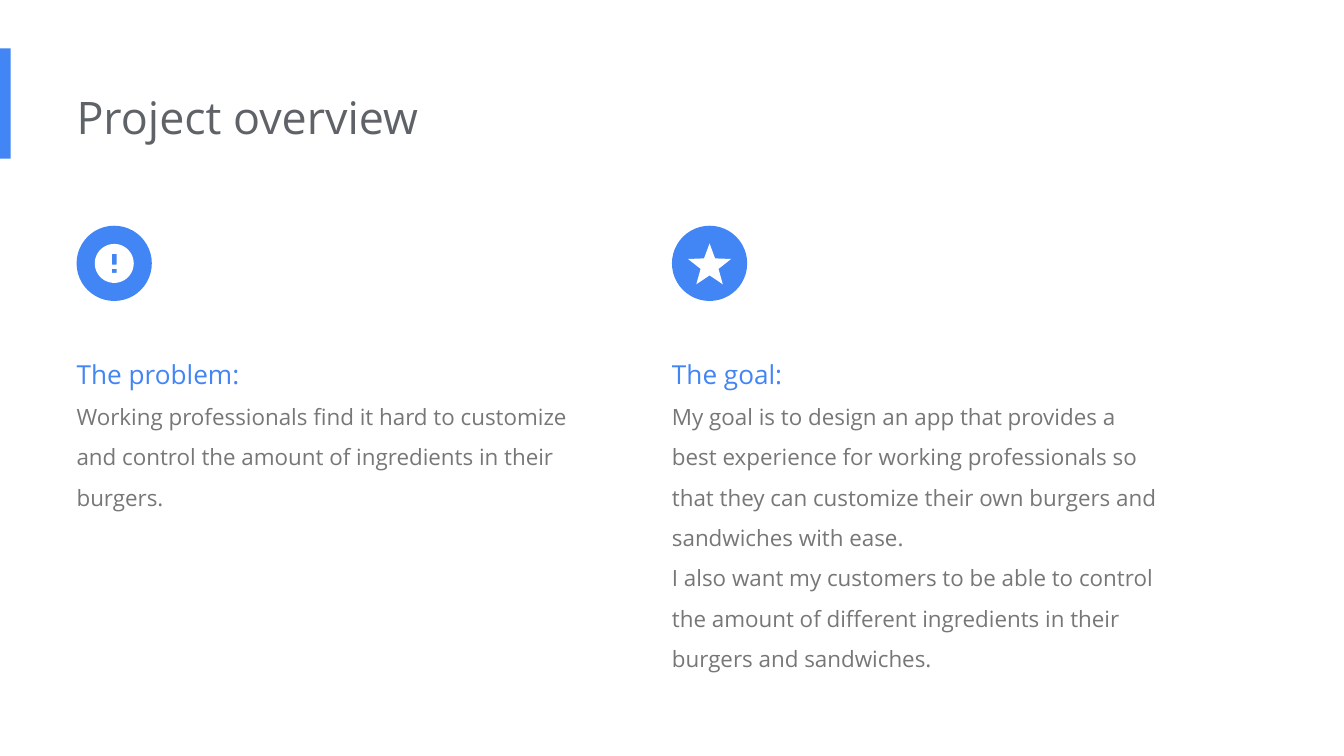
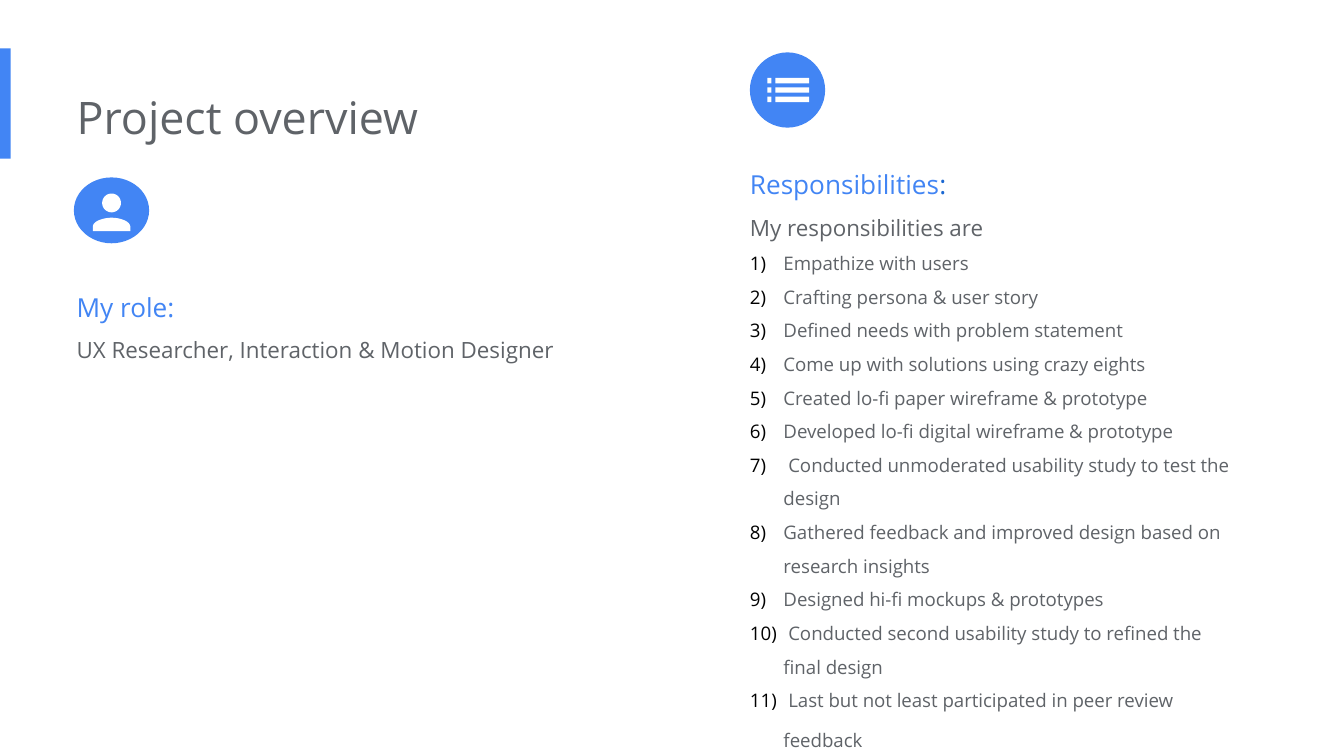
import math

import lxml.etree
import pptx
import pptx.dml.color
import pptx.enum.shapes
import pptx.enum.text
import pptx.oxml.ns
import pptx.util

COLOURS = {
    "blue": "4285F4",
    "deep blue": "1967D2",
    "slate": "5F6368",
    "grey": "777777",
    "white": "FFFFFF",
    "black": "000000",
}
FONT = "Open Sans"
HEADING, BODY, ITEM = 14, 12, 10

presentation = pptx.Presentation()
presentation.slide_width = pptx.util.Inches(10)
presentation.slide_height = pptx.util.Inches(10 * 9 / 16)

# Square grid: 100 columns across the slide, rows of the same size
unit = presentation.slide_width / 100
margin = 5.7
text_width = 37.7
badge_width = 5.6


def ring(count, radii, centre_y=0):
    """Points around a centre, the radii taken in turn, starting at the top."""
    angles = [2 * math.pi * step / count for step in range(count)]
    return [(radii[step % len(radii)] * math.sin(angle),
             centre_y - radii[step % len(radii)] * math.cos(angle))
            for step, angle in enumerate(angles)]


def bar(left, top, width, height):
    return [(left, top), (left + width, top),
            (left + width, top + height), (left, top + height)]


# Icons: closed outlines measured from the centre of their badge
shoulder = []
for step in range(17):
    t = step / 16
    shoulder.append((1.5 * t * (1 - t) ** 2 + 4.2 * t ** 2 * (1 - t) + 1.4 * t ** 3,
                     0.55 * (1 - t) ** 3 + 1.65 * t * (1 - t) ** 2
                     + 2.25 * t ** 2 * (1 - t) + 1.25 * t ** 3))
shoulder = [(min(x, 1.4), y) for x, y in shoulder] + [(1.4, 1.55)]
icons = {
    "alert": [ring(48, [1.45]), bar(-0.17, -0.7, 0.34, 0.8), bar(-0.17, 0.4, 0.34, 0.3)],
    "star": [ring(10, [1.68, 0.7], 0.2)],
    "person": [ring(32, [0.7], -0.55),
               shoulder + [(-x, y) for x, y in reversed(shoulder)]],
    "list": [bar(left, 0.7 * row - 0.2, width, 0.4)
             for row in (-1, 0, 1) for left, width in ((-1.5, 0.3), (-0.9, 2.5))],
}

# Slide contents; a run is (text, size, colour, bold), a numbered paragraph is an item
responsibilities = [
    "Empathize with users",
    "Crafting persona & user story",
    "Defined needs with problem statement",
    "Come up with solutions using crazy eights",
    "Created lo-fi paper wireframe & prototype",
    "Developed lo-fi digital wireframe & prototype",
    " Conducted unmoderated usability study to test the design",
    "Gathered feedback and improved design based on research insights",
    "Designed hi-fi mockups & prototypes",
    " Conducted second usability study to refined the final design",
    " Last but not least participated in peer review feedback",
]
numbered = [(True, [(text, ITEM, "slate", False)]) for text in responsibilities]
numbered[-1][1].append((" ", BODY, "slate", True))

# Each section: icon, badge (left, top, height), text (left, top, height), paragraphs
pages = [
    (67.3, [
        ("alert", (margin, 16.8, badge_width), (margin, 24.5, 18.2), [
            (False, [("The problem:", HEADING, "blue", False)]),
            (False, [("Working professionals find it hard to customize and control the "
                      "amount of ingredients in their burgers.", BODY, "grey", False)]),
        ]),
        ("star", (50, 16.8, badge_width), (50, 24.5, 26.8), [
            (False, [("The goal:", HEADING, "blue", False)]),
            (False, [("My goal is to design an app that provides a best experience for "
                      "working professionals so that they can customize their own "
                      "burgers and sandwiches with ease.", BODY, "grey", False)]),
            (False, [("I also want my customers to be able to control the amount of "
                      "different ingredients in their burgers and sandwiches.",
                      BODY, "grey", False)]),
        ]),
    ]),
    (30.2, [
        ("person", (5.5, 13.2, 4.9), (margin, 19.5, 8.6), [
            (False, [("My role:", HEADING, "blue", False)]),
            (False, [("UX Researcher, Interaction & Motion Designer",
                      BODY, "slate", False)]),
        ]),
        ("list", (55.8, 3.9, badge_width), (55.8, 10.4, 47), [
            (False, [("Responsibilities", HEADING, "blue", False),
                     (":", HEADING, "deep blue", False)]),
            (False, [("My responsibilities are", BODY, "slate", False)]),
            *numbered,
        ]),
    ]),
]

for title_width, sections in pages:
    slide = presentation.slides.add_slide(presentation.slide_layouts[6])
    slide.background.fill.solid()
    slide.background.fill.fore_color.rgb = pptx.dml.color.RGBColor.from_string(COLOURS["white"])

    # Accent band and badges
    kinds = pptx.enum.shapes.MSO_SHAPE
    figures = [(kinds.RECTANGLE, (0, 3.6, 0.8, 8.2))]
    for icon, (left, top, height), text_place, paragraphs in sections:
        figures.append((kinds.OVAL, (left, top, badge_width, height)))
    painted = [(slide.shapes.add_shape(kind, *[round(length * unit) for length in box]), "blue")
               for kind, box in figures]

    # White icons
    for icon, (left, top, height), text_place, paragraphs in sections:
        centre_x, centre_y = left + badge_width / 2, top + height / 2
        outlines = [[((centre_x + x) * unit, (centre_y + y) * unit) for x, y in outline]
                    for outline in icons[icon]]
        builder = slide.shapes.build_freeform(*outlines[0][0])
        for outline in outlines:
            builder.move_to(*outline[0])
            builder.add_line_segments(outline[1:], close=True)
        painted.append((builder.convert_to_shape(), "white"))

    for shape, colour in painted:
        shape.shadow.inherit = False
        shape.fill.solid()
        shape.fill.fore_color.rgb = pptx.dml.color.RGBColor.from_string(COLOURS[colour])
        shape.line.fill.background()

    # Title and section texts
    title = [(False, [("Project overview", 24, "slate", False)])]
    texts = [((margin, 5.7, title_width, 6.1), 1, title)]
    for icon, badge, (left, top, height), paragraphs in sections:
        texts.append(((left, top, text_width, height), 1.5, paragraphs))
    for box, spacing, paragraphs in texts:
        shape = slide.shapes.add_textbox(*[round(length * unit) for length in box])
        frame = shape.text_frame
        frame.word_wrap = True
        frame.auto_size = pptx.enum.text.MSO_AUTO_SIZE.SHAPE_TO_FIT_TEXT
        frame.margin_left = 0
        frame.margin_top = frame.margin_right = frame.margin_bottom = round(unit)
        for index, (is_item, runs) in enumerate(paragraphs):
            paragraph = frame.add_paragraph() if index else frame.paragraphs[0]
            paragraph.line_spacing = float(spacing)
            if is_item:
                properties = paragraph._p.get_or_add_pPr()
                properties.set("marL", str(round(2.5 * unit)))
                properties.set("indent", str(round(-2.5 * unit)))
                qualify = pptx.oxml.ns.qn
                bullet_colour = lxml.etree.SubElement(properties, qualify("a:buClr"))
                lxml.etree.SubElement(bullet_colour, qualify("a:srgbClr"), val=COLOURS["black"])
                lxml.etree.SubElement(properties, qualify("a:buFont"), typeface=FONT)
                lxml.etree.SubElement(properties, qualify("a:buAutoNum"), type="arabicParenR")
            for text, size, colour, bold in runs:
                run = paragraph.add_run()
                run.text = text
                run.font.name = FONT
                run.font.size = pptx.util.Pt(size)
                run.font.bold = bold
                run.font.color.rgb = pptx.dml.color.RGBColor.from_string(COLOURS[colour])

presentation.save("out.pptx")
